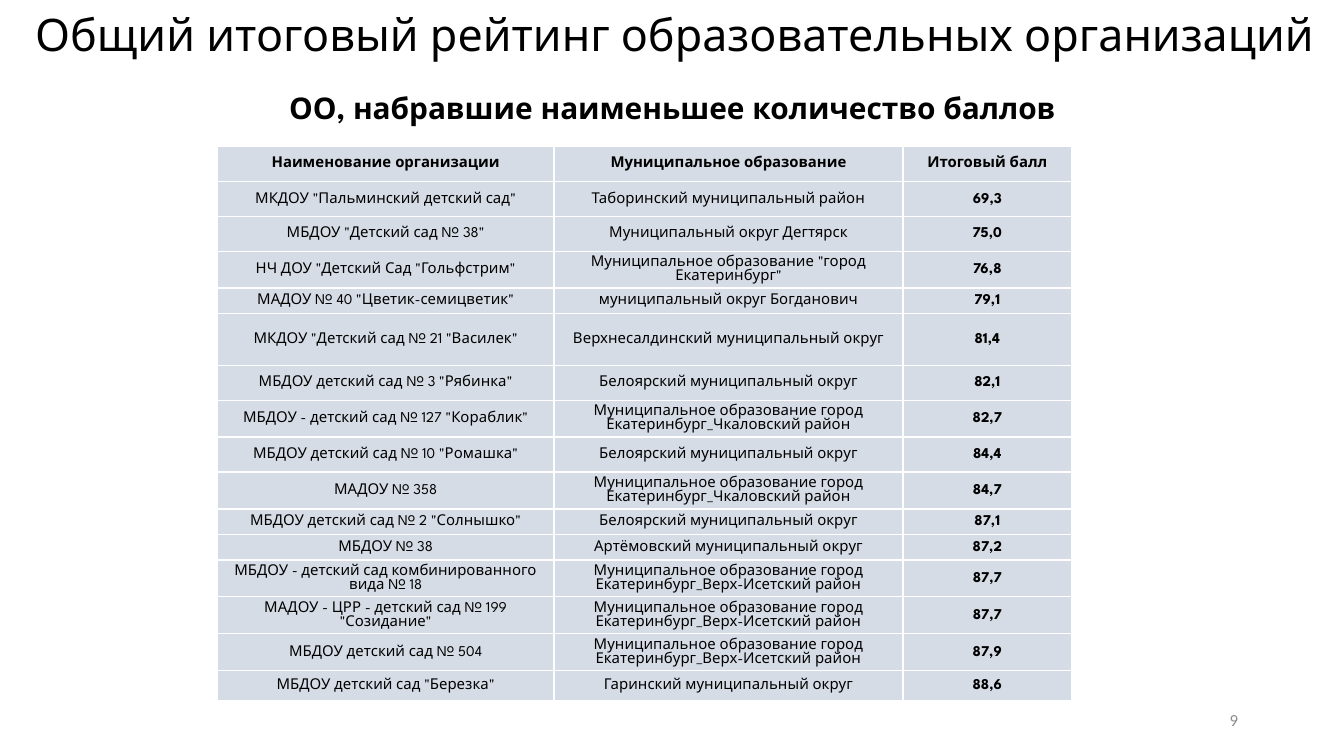
from lxml.etree import SubElement
from pptx import Presentation
from pptx.dml.color import RGBColor
from pptx.enum.text import MSO_ANCHOR as Anchor, PP_ALIGN as Align
from pptx.oxml.ns import qn
from pptx.util import Cm, Pt

FONT = "League Spartan"
BLACK, GREY, WHITE, CELL_FILL = "000000", "8C8C8C", "FFFFFF", "D6DCE5"

TITLE = "Общий итоговый рейтинг образовательных организаций"
SUBTITLE = "ОО, набравшие наименьшее количество баллов"
PAGE_NUMBER = "9"

BELOYARSKY = "Белоярский муниципальный округ"
CHKALOVSKY = "Муниципальное образование город Екатеринбург_Чкаловский район"
VERKH_ISETSKY = "Муниципальное образование город Екатеринбург_Верх-Исетский район"

HEADER = ("Наименование организации", "Муниципальное образование", "Итоговый балл")
RATING = [
    ('МКДОУ "Пальминский детский сад"', "Таборинский муниципальный район", "69,3"),
    ('МБДОУ "Детский сад № 38"', "Муниципальный округ Дегтярск", "75,0"),
    ('НЧ ДОУ "Детский Сад "Гольфстрим"', 'Муниципальное образование "город Екатеринбург"', "76,8"),
    ('МАДОУ № 40 "Цветик-семицветик"', "муниципальный округ Богданович", "79,1"),
    ('МКДОУ "Детский сад № 21 "Василек"', "Верхнесалдинский муниципальный округ", "81,4"),
    ('МБДОУ детский сад № 3 "Рябинка"', BELOYARSKY, "82,1"),
    ('МБДОУ - детский сад № 127 "Кораблик"', CHKALOVSKY, "82,7"),
    ('МБДОУ детский сад № 10 "Ромашка"', BELOYARSKY, "84,4"),
    ("МАДОУ № 358", CHKALOVSKY, "84,7"),
    ('МБДОУ детский сад № 2 "Солнышко"', BELOYARSKY, "87,1"),
    ("МБДОУ № 38", "Артёмовский муниципальный округ", "87,2"),
    ("МБДОУ - детский сад комбинированного вида № 18", VERKH_ISETSKY, "87,7"),
    ('МАДОУ - ЦРР - детский сад № 199 "Созидание"', VERKH_ISETSKY, "87,7"),
    ("МБДОУ детский сад № 504", VERKH_ISETSKY, "87,9"),
    ('МБДОУ детский сад "Березка"', "Гаринский муниципальный округ", "88,6"),
]
COLUMN_WIDTHS = (6.36, 6.6, 3.18)
ROW_HEIGHTS = [0.67] + [0.66] * 3 + [0.48, 0.98] + [0.66] * 4 + [0.48] * 5 + [0.58]


def color(value):
    return RGBColor.from_string(value)


def write(frame, text, size, bold=False, align=Align.CENTER, font=FONT, ink=BLACK):
    frame.word_wrap = True
    frame.text = text
    para = frame.paragraphs[0]
    para.alignment = align
    para.font.name = font
    para.font.size = Pt(size)
    para.font.bold = bold
    para.font.color.rgb = color(ink)


def add_borders(cell):
    properties = cell._tc.get_or_add_tcPr()
    for side in ("a:lnL", "a:lnR", "a:lnT", "a:lnB"):
        line = SubElement(properties, qn(side), w=str(Pt(1)))
        fill = SubElement(line, qn("a:solidFill"))
        SubElement(fill, qn("a:srgbClr"), val=WHITE)


def add_rating_table(page):
    rows = [HEADER] + RATING
    frame = page.shapes.add_table(
        len(rows), len(HEADER), Cm(4.11), Cm(2.76),
        Cm(sum(COLUMN_WIDTHS)), Cm(sum(ROW_HEIGHTS)))
    table = frame.table
    table.first_row = table.horz_banding = False
    for column, width in zip(table.columns, COLUMN_WIDTHS):
        column.width = Cm(width)
    for row, height in zip(table.rows, ROW_HEIGHTS):
        row.height = Cm(height)
    for row_index, values in enumerate(rows):
        for column_index, text in enumerate(values):
            cell = table.cell(row_index, column_index)
            cell.margin_left = cell.margin_right = cell.margin_top = Cm(0.02)
            cell.margin_bottom = 0
            cell.vertical_anchor = Anchor.MIDDLE
            add_borders(cell)
            cell.fill.solid()
            cell.fill.fore_color.rgb = color(CELL_FILL)
            write(cell.text_frame, text, 8, bold=row_index == 0 or column_index == 2)


def main():
    deck = Presentation()
    deck.slide_width, deck.slide_height = Cm(25.4), Cm(14.29)
    page = deck.slides.add_slide(deck.slide_layouts[5])

    title = page.shapes.title
    title.left, title.top, title.width, title.height = Cm(0.05), Cm(0), Cm(25.4), Cm(1.28)
    title.text_frame.vertical_anchor = Anchor.TOP
    write(title.text_frame, TITLE, 24)

    subtitle = page.shapes.add_textbox(Cm(5.16), Cm(1.57), Cm(15.11), Cm(0.94))
    write(subtitle.text_frame, SUBTITLE, 16, bold=True)

    number = page.shapes.add_textbox(Cm(17.93), Cm(13.23), Cm(5.72), Cm(0.76))
    number.text_frame.vertical_anchor = Anchor.MIDDLE
    write(number.text_frame, PAGE_NUMBER, 9, align=Align.RIGHT, font="Calibri", ink=GREY)

    add_rating_table(page)
    deck.save("out.pptx")


if __name__ == "__main__":
    main()
